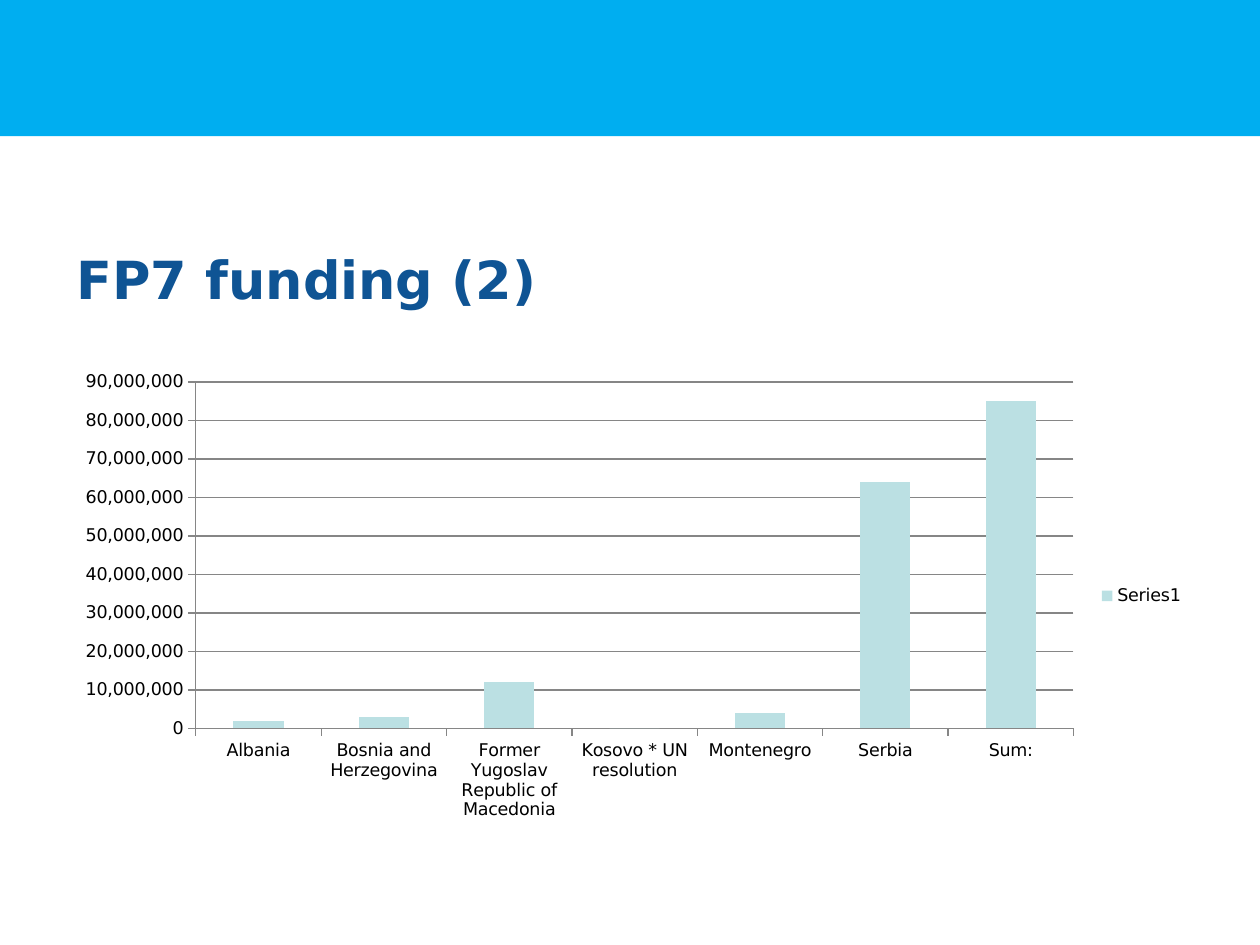
from pptx import Presentation
from pptx import util as u
from pptx.chart.data import CategoryChartData
from pptx.dml.color import RGBColor
from pptx.enum import chart as charts, shapes, text

Pt = u.Pt

# Content
TITLE = "FP7 funding (2)"
SERIES_NAME = "Series1"
FUNDING = [
    ("Albania", 2_000_000),
    ("Bosnia and Herzegovina", 3_000_000),
    ("Former Yugoslav Republic of Macedonia", 12_000_000),
    ("Kosovo * UN resolution", 0),
    ("Montenegro", 4_000_000),
    ("Serbia", 64_000_000),
    ("Sum:", 85_000_000),
]

# Format
COLORS = {"banner": "00AEF0", "title": "0F5494", "text": "000000",
          "bar": "BBE0E3", "line": "868686"}
FONT = "DejaVu Sans"
WIDTH, HEIGHT = 720, 540
BANNER_BOX = (0, 0, WIDTH, 77.76)
TITLE_BOX = (36.72, 122.4, 648, 73.44)
CHART_BOX = (36, 207.36, 648, 266.4)


def points(box):
    return [Pt(value) for value in box]


def color(name):
    return RGBColor.from_string(COLORS[name])


def apply(target, **values):
    for name, value in values.items():
        setattr(target, name, value)


def style_font(font, size, color_name, bold=False):
    apply(font, name=FONT, size=Pt(size), bold=bold)
    font.color.rgb = color(color_name)


def style_line(line):
    line.color.rgb = color("line")
    line.width = Pt(0.75)


presentation = Presentation()
apply(presentation, slide_width=Pt(WIDTH), slide_height=Pt(HEIGHT))
slide = presentation.slides.add_slide(presentation.slide_layouts[6])

# Banner
banner = slide.shapes.add_shape(shapes.MSO_SHAPE.RECTANGLE, *points(BANNER_BOX))
banner.shadow.inherit = False
banner.fill.solid()
banner.fill.fore_color.rgb = color("banner")
banner.line.fill.background()

# Title
frame = slide.shapes.add_textbox(*points(TITLE_BOX)).text_frame
apply(frame, word_wrap=True, vertical_anchor=text.MSO_ANCHOR.MIDDLE)
paragraph = frame.paragraphs[0]
run = paragraph.add_run()
run.text = TITLE
style_font(run.font, 30, "title", bold=True)

# Funding chart
data = CategoryChartData(number_format="#,##0")
data.categories = [country for country, _ in FUNDING]
data.add_series(SERIES_NAME, [amount for _, amount in FUNDING])
chart = slide.shapes.add_chart(
    charts.XL_CHART_TYPE.COLUMN_CLUSTERED, *points(CHART_BOX), data).chart
style_font(chart.font, 10, "text")
apply(chart, has_title=False, has_legend=True)
apply(chart.legend, position=charts.XL_LEGEND_POSITION.RIGHT,
      include_in_layout=False)

plot = chart.plots[0]
apply(plot, gap_width=150, vary_by_categories=False)
bars = plot.series[0].format.fill
bars.solid()
bars.fore_color.rgb = color("bar")

# Axes
for axis in (chart.category_axis, chart.value_axis):
    apply(axis, major_tick_mark=charts.XL_TICK_MARK.OUTSIDE,
          minor_tick_mark=charts.XL_TICK_MARK.NONE)
    style_line(axis.format.line)
value_axis = chart.value_axis
apply(value_axis, minimum_scale=0, maximum_scale=90_000_000,
      major_unit=10_000_000, has_major_gridlines=True)
apply(value_axis.tick_labels, number_format="#,##0",
      number_format_is_linked=False)
style_line(value_axis.major_gridlines.format.line)

presentation.save("out.pptx")
